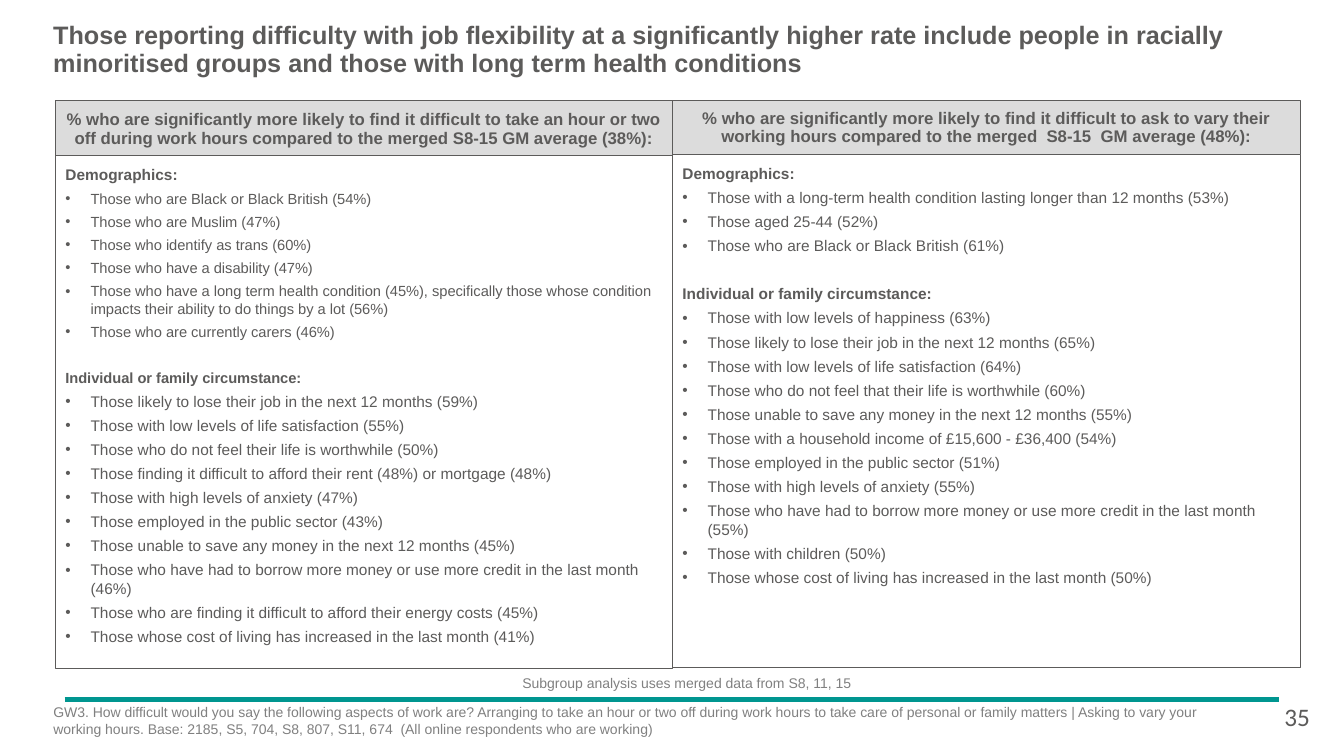
from dataclasses import dataclass

from lxml.etree import SubElement
from pptx import Presentation
from pptx.dml.color import RGBColor
from pptx.enum.shapes import MSO_CONNECTOR, MSO_SHAPE
from pptx.enum.text import MSO_ANCHOR, PP_ALIGN
from pptx.oxml.ns import qn
from pptx.util import Inches, Pt

GREY, PALE, TEAL, WHITE = "5C5B5A", "808080", "009690", "FFFFFF"


@dataclass
class Group:
    title: str
    items: list[str]
    head_size: float = 11
    size: float = 11


@dataclass
class Panel:
    left: float
    width: float
    head: str
    head_high: float
    top: float
    gap: float
    groups: list[Group]


PANELS = [
    Panel(0.55, 6.12,
          "% who are significantly more likely to find it difficult to take an hour or two "
          "off during work hours compared to the merged S8-15 GM average (38%):",
          0.57, 1.54, 16, [
              Group("Demographics:", [
                  "Those who are Black or Black British (54%)",
                  "Those who are Muslim (47%)",
                  "Those who identify as trans (60%)",
                  "Those who have a disability (47%)",
                  "Those who have a long term health condition (45%), specifically those "
                  "whose condition impacts their ability to do things by a lot (56%)",
                  "Those who are currently carers (46%)",
              ], size=10.5),
              Group("Individual or family circumstance:", [
                  "Those likely to lose their job in the next 12 months (59%)",
                  "Those with low levels of life satisfaction (55%)",
                  "Those who do not feel their life is worthwhile (50%)",
                  "Those finding it difficult to afford their rent (48%) or mortgage (48%)",
                  "Those with high levels of anxiety (47%)",
                  "Those employed in the public sector (43%)",
                  "Those unable to save any money in the next 12 months (45%)",
                  "Those who have had to borrow more money or use more credit in the "
                  "last month (46%)",
                  "Those who are finding it difficult to afford their energy costs (45%)",
                  "Those whose cost of living has increased in the last month (41%)",
              ], head_size=10.5),
          ]),
    Panel(6.67, 6.23,
          "% who are significantly more likely to find it difficult to ask to vary their "
          "working hours compared to the merged  S8-15  GM average (48%):",
          0.54, 1.53, 17, [
              Group("Demographics:", [
                  "Those with a long-term health condition lasting longer than 12 months (53%)",
                  "Those aged 25-44 (52%)",
                  "Those who are Black or Black British (61%)",
              ]),
              Group("Individual or family circumstance:", [
                  "Those with low levels of happiness (63%)",
                  "Those likely to lose their job in the next 12 months (65%)",
                  "Those with low levels of life satisfaction (64%)",
                  "Those who do not feel that their life is worthwhile (60%)",
                  "Those unable to save any money in the next 12 months (55%)",
                  "Those with a household income of £15,600 - £36,400 (54%)",
                  "Those employed in the public sector (51%)",
                  "Those with high levels of anxiety (55%)",
                  "Those who have had to borrow more money or use more credit in the "
                  "last month (55%)",
                  "Those with children (50%)",
                  "Those whose cost of living has increased in the last month (50%)",
              ]),
          ]),
]


def paint(target, color: str) -> None:
    target.rgb = RGBColor.from_string(color)


def write(frame, text: str, *, size: float, color: str = GREY, bold: bool = False,
          font: str = "Arial", align=PP_ALIGN.LEFT, spacing: float = 1,
          before: float = 0, after: float = 0, bullet: bool = False) -> None:
    """Fill the empty first paragraph, or add one below."""
    para = frame.paragraphs[0]
    if para.runs:
        para = frame.add_paragraph()
    if bullet:
        props = para._p.get_or_add_pPr()
        props.set("marL", str(Inches(0.25)))
        props.set("indent", str(Inches(-0.25)))
        SubElement(props, qn("a:buFont"), typeface="Arial")
        SubElement(props, qn("a:buChar"), char="•")
    para.alignment, para.line_spacing = align, spacing
    para.space_before, para.space_after = Pt(before), Pt(after)
    run = para.add_run()
    run.text = text
    run.font.size, run.font.bold, run.font.name = Pt(size), bold, font
    paint(run.font.color, color)


def label(slide, left: float, top: float, width: float, height: float,
          text: str, **style) -> None:
    box = slide.shapes.add_textbox(*map(Inches, (left, top, width, height)))
    box.text_frame.word_wrap = True
    write(box.text_frame, text, **style)


def block(slide, left: float, top: float, width: float, height: float,
          color: str, anchor, alpha: int = 100):
    """Draw an outlined rectangle and return its text frame."""
    shape = slide.shapes.add_shape(
        MSO_SHAPE.RECTANGLE, *map(Inches, (left, top, width, height)))
    shape.shadow.inherit = False
    shape.fill.solid()
    paint(shape.fill.fore_color, color)
    if alpha < 100:
        tint = shape._element.spPr.find(qn("a:solidFill"))[0]
        SubElement(tint, qn("a:alpha"), val=str(alpha * 1000))
    paint(shape.line.color, GREY)
    shape.line.width = Pt(0.75)
    frame = shape.text_frame
    frame.word_wrap, frame.vertical_anchor = True, anchor
    return frame


def draw(slide, panel: Panel) -> None:
    head = block(slide, panel.left, 1, panel.width, panel.head_high,
                 GREY, MSO_ANCHOR.MIDDLE, alpha=21)
    write(head, panel.head, size=12, bold=True, align=PP_ALIGN.CENTER, spacing=0.9)
    body = block(slide, panel.left, panel.top, panel.width, 5.09, WHITE, MSO_ANCHOR.TOP)
    body.margin_top = body.margin_bottom = Inches(0.1)
    for index, group in enumerate(panel.groups):
        write(body, group.title, size=group.head_size, bold=True,
              before=panel.gap if index else 0, after=4)
        for item in group.items:
            write(body, item, size=group.size, after=4, bullet=True)


def main() -> None:
    deck = Presentation()
    deck.slide_width, deck.slide_height = Inches(13.33), Inches(7.5)
    slide = deck.slides.add_slide(deck.slide_layouts[6])

    # Footer rule
    rule = slide.shapes.add_connector(
        MSO_CONNECTOR.STRAIGHT, *map(Inches, (0.64, 6.94, 12.69, 6.94)))
    paint(rule.line.color, TEAL)
    rule.line.width = Pt(3)
    SubElement(rule._element.spPr, qn("a:effectLst"))

    # Title
    label(slide, 0.43, 0.18, 12.7, 0.65,
          "Those reporting difficulty with job flexibility at a significantly higher rate "
          "include people in racially minoritised groups and those with long term health "
          "conditions", size=18, bold=True, spacing=0.9)

    # Two panels
    for panel in PANELS:
        draw(slide, panel)

    # Notes and page number
    label(slide, 4.87, 6.64, 3.88, 0.27,
          "Subgroup analysis uses merged data from S8, 11, 15",
          size=10, color=PALE, align=PP_ALIGN.CENTER)
    label(slide, 0.43, 6.93, 11.98, 0.56,
          "GW3. How difficult would you say the following aspects of work are? Arranging to "
          "take an hour or two off during work hours to take care of personal or family "
          "matters | Asking to vary your working hours. Base: 2185, S5, 704, S8, 807, S11, "
          "674  (All online respondents who are working)", size=10, color=PALE)
    label(slide, 12.64, 6.91, 0.53, 0.4, "35", size=18, font="Calibri")

    deck.save("out.pptx")


if __name__ == "__main__":
    main()
